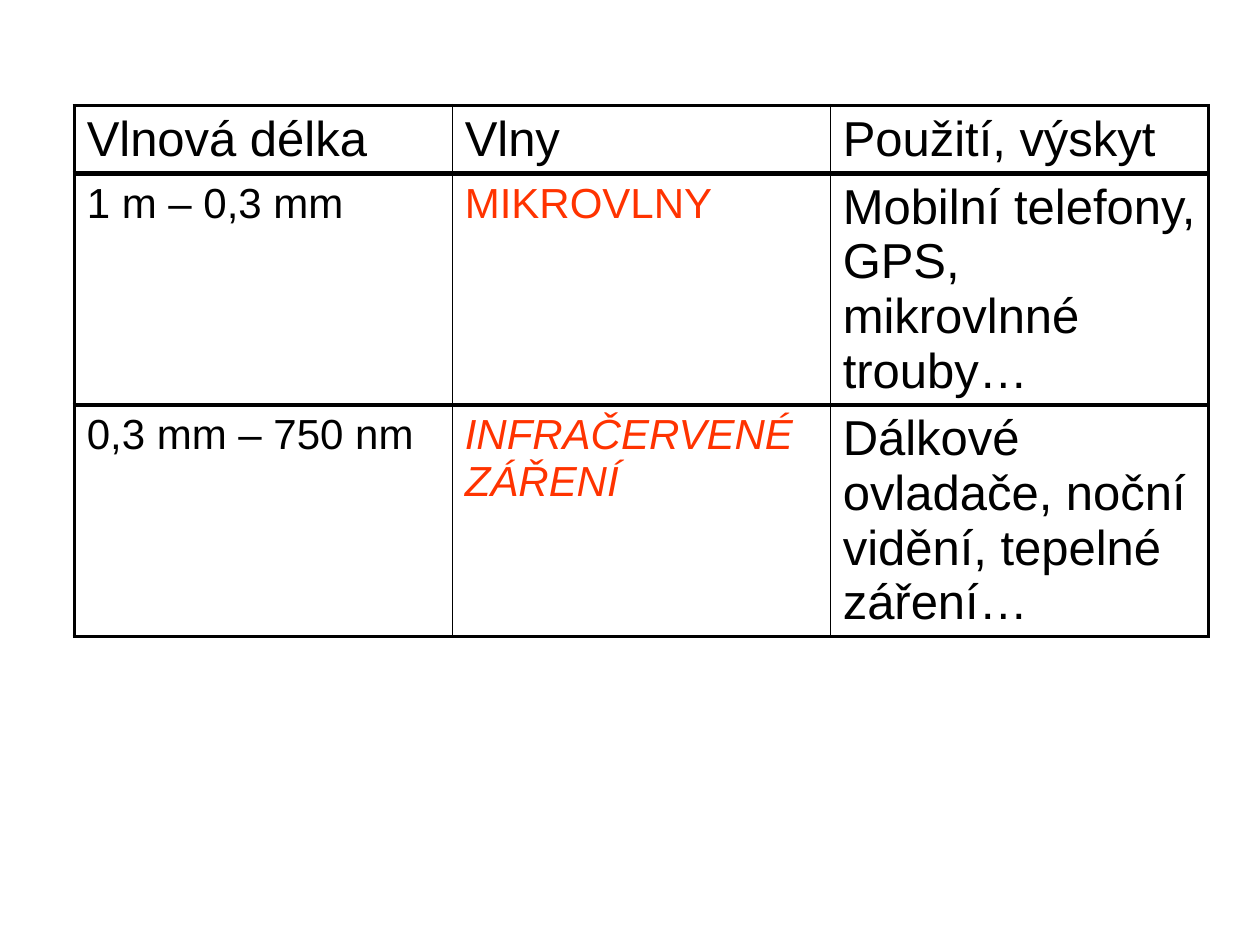
from dataclasses import dataclass

from lxml.etree import SubElement
from pptx import Presentation
from pptx.dml.color import RGBColor
from pptx.oxml.ns import qn
from pptx.table import Table, _Cell
from pptx.util import Cm, Pt

BLACK = "000000"
RED = "FF3300"
INNER, OUTER, RULE = 0.96, 2.21, 3
COLUMN_WIDTH = Cm(7.62)
ROW_HEIGHTS = [Cm(1.37), Cm(3.3), Cm(4.39)]
COLUMN_LINES = [OUTER, INNER, INNER, OUTER]
ROW_LINES = [OUTER, RULE, RULE, OUTER]


@dataclass
class Entry:
    text: str
    size: int = 28
    color: str = BLACK
    italic: bool = False


ENTRIES = [
    [Entry("Vlnová délka"), Entry("Vlny"), Entry("Použití, výskyt")],
    [
        Entry("1 m – 0,3 mm", 24),
        Entry("MIKROVLNY", 24, RED),
        Entry("Mobilní telefony, GPS, mikrovlnné trouby…"),
    ],
    [
        Entry("0,3 mm – 750 nm", 24),
        Entry("INFRAČERVENÉ ZÁŘENÍ", 24, RED, True),
        Entry("Dálkové ovladače, noční vidění, tepelné záření…"),
    ],
]


def rgb(value: str) -> RGBColor:
    return RGBColor.from_string(value)


def write_entry(cell: _Cell, entry: Entry) -> None:
    cell.margin_left = cell.margin_right = Cm(0.25)
    cell.margin_top = cell.margin_bottom = Cm(0.13)
    cell.text = entry.text
    para = cell.text_frame.paragraphs[0]
    para.space_before = Pt(entry.size * 0.2)
    font = para.font
    font.name = "Arial"
    font.size = Pt(entry.size)
    font.italic = entry.italic
    font.color.rgb = rgb(entry.color)


def draw_borders(cell: _Cell, row: int, column: int) -> None:
    properties = cell._tc.get_or_add_tcPr()
    widths = {
        "a:lnL": COLUMN_LINES[column],
        "a:lnR": COLUMN_LINES[column + 1],
        "a:lnT": ROW_LINES[row],
        "a:lnB": ROW_LINES[row + 1],
    }
    for tag, width in widths.items():
        line = SubElement(properties, qn(tag), w=str(Pt(width)))
        fill = SubElement(line, qn("a:solidFill"))
        SubElement(fill, qn("a:srgbClr"), val=BLACK)


def fill_table(table: Table) -> None:
    table.first_row = table.horz_banding = False
    for column in table.columns:
        column.width = COLUMN_WIDTH
    for row_index, entries in enumerate(ENTRIES):
        table.rows[row_index].height = ROW_HEIGHTS[row_index]
        for column_index, entry in enumerate(entries):
            cell = table.cell(row_index, column_index)
            write_entry(cell, entry)
            draw_borders(cell, row_index, column_index)
            cell.fill.background()


def main() -> None:
    deck = Presentation()
    deck.slide_width, deck.slide_height = Cm(25.4), Cm(19.05)
    page = deck.slides.add_slide(deck.slide_layouts[6])
    frame = page.shapes.add_table(
        len(ENTRIES), len(ENTRIES[0]), Cm(1.5), Cm(2.13),
        COLUMN_WIDTH * len(ENTRIES[0]), sum(ROW_HEIGHTS),
    )
    fill_table(frame.table)
    deck.save("out.pptx")


if __name__ == "__main__":
    main()
